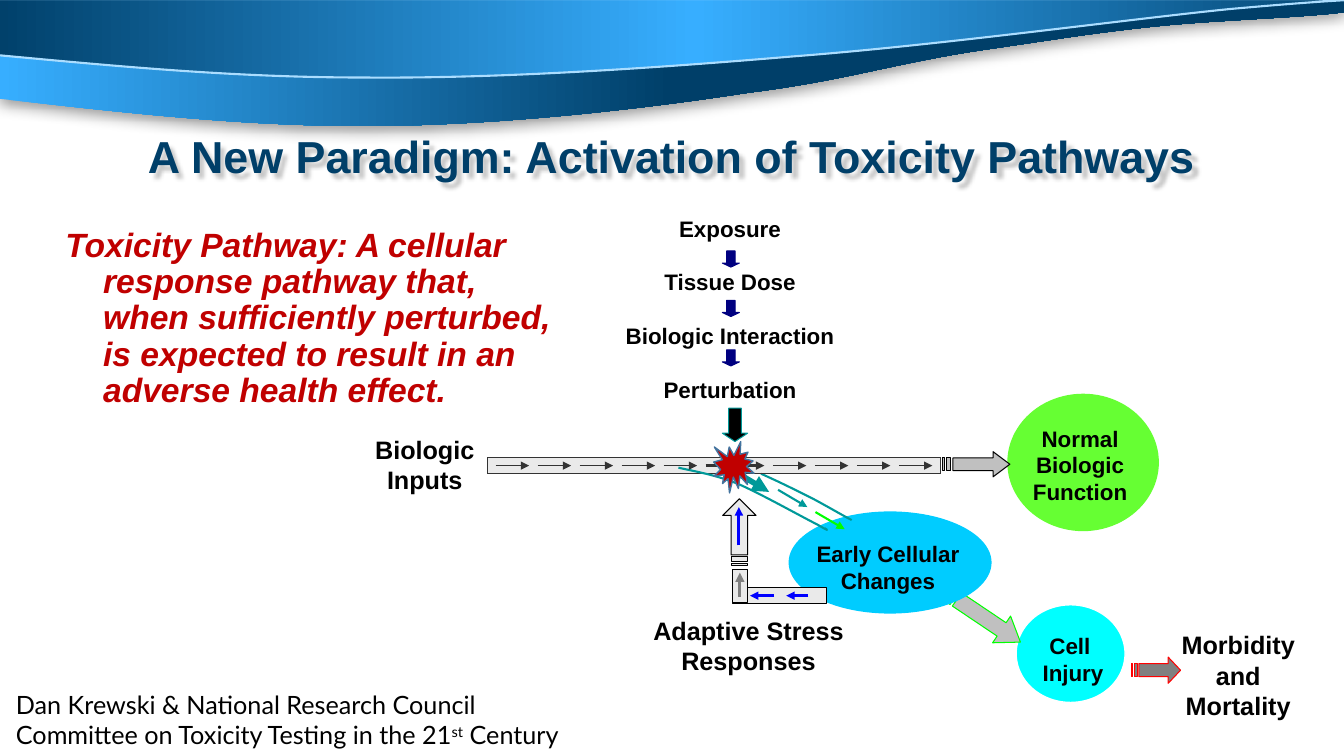
"""Build the toxicity pathways slide."""
from copy import deepcopy
from dataclasses import dataclass

from lxml.etree import SubElement
from pptx import Presentation
from pptx.dml.color import RGBColor
from pptx.enum.shapes import MSO_CONNECTOR as Connector, MSO_SHAPE as Preset
from pptx.enum.text import MSO_ANCHOR as Anchor, PP_ALIGN as Align
from pptx.oxml.ns import qn
from pptx.util import Pt

Point = tuple[float, float]
Box = tuple[float, float, float, float]


@dataclass(frozen=True)
class Theme:
    heading: str = "Arial"
    credit: str = "Lato"
    navy: str = "003F69"
    sky: str = "37AEFF"
    pale: str = "ABDDFF"
    red: str = "C00000"
    black: str = "000000"
    dark: str = "333333"
    light: str = "EAEAEA"
    silver: str = "C0C0C0"
    gray: str = "808080"
    teal: str = "009999"
    blue: str = "0000FF"
    lime: str = "00FF00"
    arrow_navy: str = "000080"
    title_size: int = 32
    body_size: int = 24
    large: int = 18
    small: int = 16


THEME = Theme()


@dataclass(frozen=True)
class Block:
    preset: Preset
    box: Box
    fill: str
    line: str
    weight: float = 0.75
    adjustments: tuple[float, ...] = ()


@dataclass(frozen=True)
class StripedArrow:
    box: Box
    fill: str
    line: str
    rotation: float = 0


@dataclass(frozen=True)
class Stroke:
    start: Point
    end: Point
    color: str = THEME.dark
    weight: float = 0.75
    arrow: bool = True


@dataclass(frozen=True)
class Curve:
    start: Point
    cubics: tuple[tuple[Point, Point, Point], ...]
    corners: tuple[Point, ...] = ()
    gradient: tuple[str, ...] = ()
    line: str = ""


@dataclass(frozen=True)
class Label:
    box: Box
    lines: tuple[str, ...]
    size: int
    color: str = THEME.black
    gap: float = 0
    wrap: bool = False


BANDS = (
    Curve((0, 70.6), (((90, 80.6), (176.4, 90.7), (268.6, 90)),
                      ((357.8, 89.3), (455, 78.5), (535, 66.2)),
                      ((608.4, 56.9), (639.4, 44.6), (709.9, 34.6)),
                      ((758.9, 27.4), (785.5, 23), (827.3, 18.7)),
                      ((869, 14.4), (938.9, 12.2), (960.5, 8.6))),
          ((960, 0), (0, 0.7)), (THEME.sky, THEME.navy, THEME.navy)),
    Curve((-7.2, 38.9), (((78.5, 46.8), (164.2, 55.4), (259.9, 55.4)),
                         ((355.7, 56.2), (463.7, 49), (566.6, 40.3)),
                         ((670.3, 32.4), (806.4, 13.7), (878.4, 6.5)),
                         ((951.1, 0), (982.1, -1.4), (1000.1, -0.7))),
          ((-7.9, -0.7),), (THEME.navy, THEME.sky, THEME.navy), THEME.pale))
BRANCH_EDGES = (
    Curve((484.6, 334.1), (((497.5, 337), (510.5, 339.1), (527, 345.6)),
                           ((543.6, 352.8), (573.1, 369.4), (583.2, 374.4)),
                           ((593.3, 380.2), (591.1, 378.7), (589, 377.3))), line=THEME.teal),
    Curve((543.6, 338.4), (((556.6, 344.2), (569.5, 350.6), (581, 356.4)),
                           ((591.8, 362.2), (604.1, 369.4), (608.4, 371.5))), line=THEME.teal))
OUTCOME_BLOCKS = (
    Block(Preset.OVAL, (720, 281.7, 107.3, 97.2), "66FF33", "66FF33", 1),
    Block(Preset.RECTANGLE, (348, 327, 324, 11.5), THEME.light, THEME.dark),
    Block(Preset.OVAL, (725.8, 432, 77.8, 69.8), "00FFFF", "FFFFFF", 1))
STRIPED_ARROWS = (
    StripedArrow((673.2, 322.6, 48.2, 18), THEME.silver, THEME.black),
    StripedArrow((669.6, 429.1, 64.8, 23), THEME.silver, THEME.lime, 33.9),
    StripedArrow((808, 469.4, 35.3, 18.7), THEME.gray, "FF0000"),
    StripedArrow((504.4, 368.1, 47.5, 23.8), THEME.light, THEME.black, 270))
CHANGE_BLOCKS = (
    Block(Preset.OVAL, (563.8, 365.8, 144, 72), "00CCFF", "00CCFF", 1),
    Block(Preset.RECTANGLE, (523.4, 419.8, 67, 11.5), THEME.light, THEME.black),
    Block(Preset.RECTANGLE, (523.4, 406.8, 10.8, 23.8), THEME.light, THEME.black),
    *(Block(Preset.DOWN_ARROW, (516, 179.3 + 35.3 * step, 12.2, 11.5), THEME.arrow_navy,
            THEME.arrow_navy, 0.75, (0.5, 0.25)) for step in range(3)),
    Block(Preset.DOWN_ARROW, (516, 291.6, 18, 23.8), THEME.black, THEME.teal, 0.75, (0.5, 0.33)))
PERTURBATION = Block(Preset.EXPLOSION1, (509.8, 315.4, 28.8, 36.7), THEME.red, "43739E", 1)
STROKES = (
    Stroke((348, 327), (672, 327), arrow=False),
    Stroke((348, 338.5), (486, 338.5), arrow=False),
    Stroke((543.6, 338.5), (672, 338.5), arrow=False),
    Stroke((348, 327), (348, 338.5), arrow=False),
    *(Stroke((left, 332.6), (left + 24, 332.6))
      for left in (*range(354, 475, 30), *range(552, 643, 30))),
    Stroke((504, 332.6), (546, 332.6), weight=2),
    Stroke((519.1, 333.4), (549.4, 351.4), THEME.teal, 4),
    Stroke((555.8, 349.9), (576.7, 362.2), THEME.teal, 1.5),
    Stroke((582.5, 365.8), (603.4, 378), THEME.lime, 1.5),
    Stroke((553, 425.5), (535.7, 425.5), THEME.blue, 2),
    Stroke((577.4, 425.5), (561.6, 425.5), THEME.blue, 2),
    Stroke((527.8, 389.5), (527.8, 362.2), THEME.blue, 2),
    Stroke((528.5, 426.2), (528.5, 409), THEME.gray, 2.25))
LABELS = (
    Label((260.6, 306.7, 85.7, 50.4), ("Biologic", "Inputs"), THEME.large),
    Label((730.5, 299.8, 82.1, 64.8), ("Normal", "Biologic", "Function"), THEME.small),
    Label((836.6, 446.2, 95.8, 72), ("Morbidity", "and", "Mortality"), THEME.large),
    Label((737.3, 448.2, 58.3, 46.1), ("Cell ", "Injury"), THEME.small),
    Label((459.4, 436, 150.5, 50.4), ("Adaptive Stress", "Responses"), THEME.large),
    Label((565.2, 382.3, 138.2, 46.1), ("Early Cellular", "Changes"), THEME.small, wrap=True),
    Label((431.8, 149.8, 179.3, 141.8),
          ("Exposure", "Tissue Dose", "Biologic Interaction", "Perturbation"),
          THEME.small, gap=19.2, wrap=True))
TITLE = Label((79.9, 72.2, 800, 77.8), ("A New Paradigm: Activation of Toxicity Pathways",),
              THEME.title_size, THEME.navy, wrap=True)
DEFINITION = Label((39.6, 159.6, 372.2, 175.7), (
    "Toxicity Pathway: A cellular response pathway that, when sufficiently perturbed, "
    "is expected to result in an adverse health effect.",), THEME.body_size, THEME.red, wrap=True)
CREDIT = Label((4.3, 488.9, 407.5, 50.4), (
    "Dan Krewski & National Research Council",
    "Committee on Toxicity Testing in the 21"), THEME.large)


def paint(shape, fill: str, line: str, weight: float) -> None:
    """Set a solid fill and outline without a shadow."""
    shape.shadow.inherit = False
    shape.fill.solid()
    shape.fill.fore_color.rgb = RGBColor.from_string(fill)
    shape.line.color.rgb = RGBColor.from_string(line)
    shape.line.width = Pt(weight)


def add_shadow(shape, alpha: int, blur: float, distance: float, angle: int) -> None:
    """Give a shape a soft black shadow."""
    shape.shadow.inherit = False
    effects = shape._element.spPr.find(qn("a:effectLst"))
    shadow = SubElement(effects, qn("a:outerShdw"), blurRad=str(Pt(blur)), dist=str(Pt(distance)),
                        dir=str(angle * 60000), algn="tl", rotWithShape="0")
    color = SubElement(shadow, qn("a:srgbClr"), val=THEME.black)
    SubElement(color, qn("a:alpha"), val=str(alpha * 1000))


def draw_block(slide, block: Block) -> None:
    """Draw one preset shape."""
    shape = slide.shapes.add_shape(block.preset, *map(Pt, block.box))
    for index, value in enumerate(block.adjustments):
        shape.adjustments[index] = value
    paint(shape, block.fill, block.line, block.weight)


def draw_outline(slide, contours: list[list[Point]], close: bool):
    """Draw a freeform made of one or more contours."""
    scaled = [[(Pt(x), Pt(y)) for x, y in contour] for contour in contours]
    builder = slide.shapes.build_freeform(*scaled[0][0])
    for index, contour in enumerate(scaled):
        if index:
            builder.move_to(*contour[0])
        builder.add_line_segments(contour[1:], close=close)
    return builder.convert_to_shape()


def draw_striped_arrow(slide, arrow: StripedArrow) -> None:
    """Draw a right arrow with two stripes at its tail."""
    left, top, width, height = arrow.box
    outlines = [[(.75, 0), (.75, .25), (5 / 32, .25), (5 / 32, .75), (.75, .75), (.75, 1), (1, .5)]]
    outlines += [[(a, .25), (a, .75), (b, .75), (b, .25)] for a, b in ((1 / 16, 1 / 8), (0, 1 / 32))]
    contours = [[(left + x * width, top + y * height) for x, y in outline] for outline in outlines]
    shape = draw_outline(slide, contours, True)
    shape.rotation = arrow.rotation
    paint(shape, arrow.fill, arrow.line, 0.75)


def draw_curve(slide, curve: Curve):
    """Draw a chain of cubic curves, filled when it has a gradient."""
    controls = [point for cubic in curve.cubics for point in cubic]
    shape = draw_outline(slide, [[curve.start, *controls, *curve.corners]], bool(curve.gradient))
    segments = list(shape._element.spPr.iter(qn("a:lnTo")))
    for first in range(0, len(controls), 3):
        cubic = SubElement(segments[first].getparent(), qn("a:cubicBezTo"))
        segments[first].addprevious(cubic)
        for segment in segments[first:first + 3]:
            cubic.append(segment[0])
            segment.getparent().remove(segment)
    shape.shadow.inherit = False
    if curve.gradient:
        shape.fill.gradient()
        shape.fill.gradient_angle = 0
        stops = shape._element.spPr.find(qn("a:gradFill")).find(qn("a:gsLst"))
        stops.append(deepcopy(stops[0]))
        for index, (stop, color) in enumerate(zip(shape.fill.gradient_stops, curve.gradient)):
            stop.position = index / 2
            stop.color.rgb = RGBColor.from_string(color)
    else:
        shape.fill.background()
    if curve.line:
        shape.line.color.rgb = RGBColor.from_string(curve.line)
        shape.line.width = Pt(1.5)
    else:
        shape.line.fill.background()
    return shape


def draw_stroke(slide, stroke: Stroke) -> None:
    """Draw a straight line, with an arrowhead where wanted."""
    connector = slide.shapes.add_connector(
        Connector.STRAIGHT, *map(Pt, (*stroke.start, *stroke.end)))
    connector.line.color.rgb = RGBColor.from_string(stroke.color)
    connector.line.width = Pt(stroke.weight)
    if stroke.arrow:
        SubElement(connector.line._get_or_add_ln(), qn("a:tailEnd"), type="triangle")
    SubElement(connector._element.spPr, qn("a:effectLst"))


def style_run(run, label: Label, font: str, bold: bool) -> None:
    """Set the type of one run."""
    run.font.name, run.font.size, run.font.bold = font, Pt(label.size), bold
    run.font.color.rgb = RGBColor.from_string(label.color)


def draw_label(slide, label: Label, font: str = THEME.heading, bold: bool = True,
               align: Align = Align.CENTER):
    """Draw a text box with one paragraph per line."""
    shape = slide.shapes.add_textbox(*map(Pt, label.box))
    shape.text_frame.word_wrap = label.wrap
    shape.text_frame.text = "\n".join(label.lines)
    for index, paragraph in enumerate(shape.text_frame.paragraphs):
        paragraph.alignment = align
        if index and label.gap:
            paragraph.space_before = Pt(label.gap)
        for run in paragraph.runs:
            style_run(run, label, font, bold)
    return shape


def draw_texts(slide) -> None:
    """Draw the labels, credit, title and definition."""
    for label in LABELS:
        draw_label(slide, label)
    credit = draw_label(slide, CREDIT, THEME.credit, False, Align.LEFT)
    for text, baseline in (("st", "30000"), (" Century", "0")):
        run = credit.text_frame.paragraphs[-1].add_run()
        run.text = text
        style_run(run, CREDIT, THEME.credit, False)
        run.font._element.set("baseline", baseline)
    title = draw_label(slide, TITLE)
    title.text_frame.vertical_anchor = Anchor.MIDDLE
    add_shadow(title, 22, 3, 4, 45)
    paragraph = draw_label(slide, DEFINITION, align=Align.LEFT).text_frame.paragraphs[0]
    paragraph.line_spacing = 0.9
    paragraph.runs[0].font.italic = True
    properties = paragraph._p.get_or_add_pPr()
    properties.set("marL", str(Pt(27)))
    properties.set("indent", str(Pt(-27)))


def main() -> None:
    """Build and save the presentation."""
    presentation = Presentation()
    presentation.slide_width, presentation.slide_height = Pt(960), Pt(540)
    slide = presentation.slides.add_slide(presentation.slide_layouts[6])
    lower_band, _ = [draw_curve(slide, band) for band in BANDS]
    add_shadow(lower_band, 40, 10, 3, 90)
    for block in OUTCOME_BLOCKS:
        draw_block(slide, block)
    for arrow in STRIPED_ARROWS:
        draw_striped_arrow(slide, arrow)
    for block in CHANGE_BLOCKS:
        draw_block(slide, block)
    for edge in BRANCH_EDGES:
        draw_curve(slide, edge)
    for stroke in STROKES:
        draw_stroke(slide, stroke)
    draw_texts(slide)
    draw_block(slide, PERTURBATION)
    presentation.save("out.pptx")


if __name__ == "__main__":
    main()
